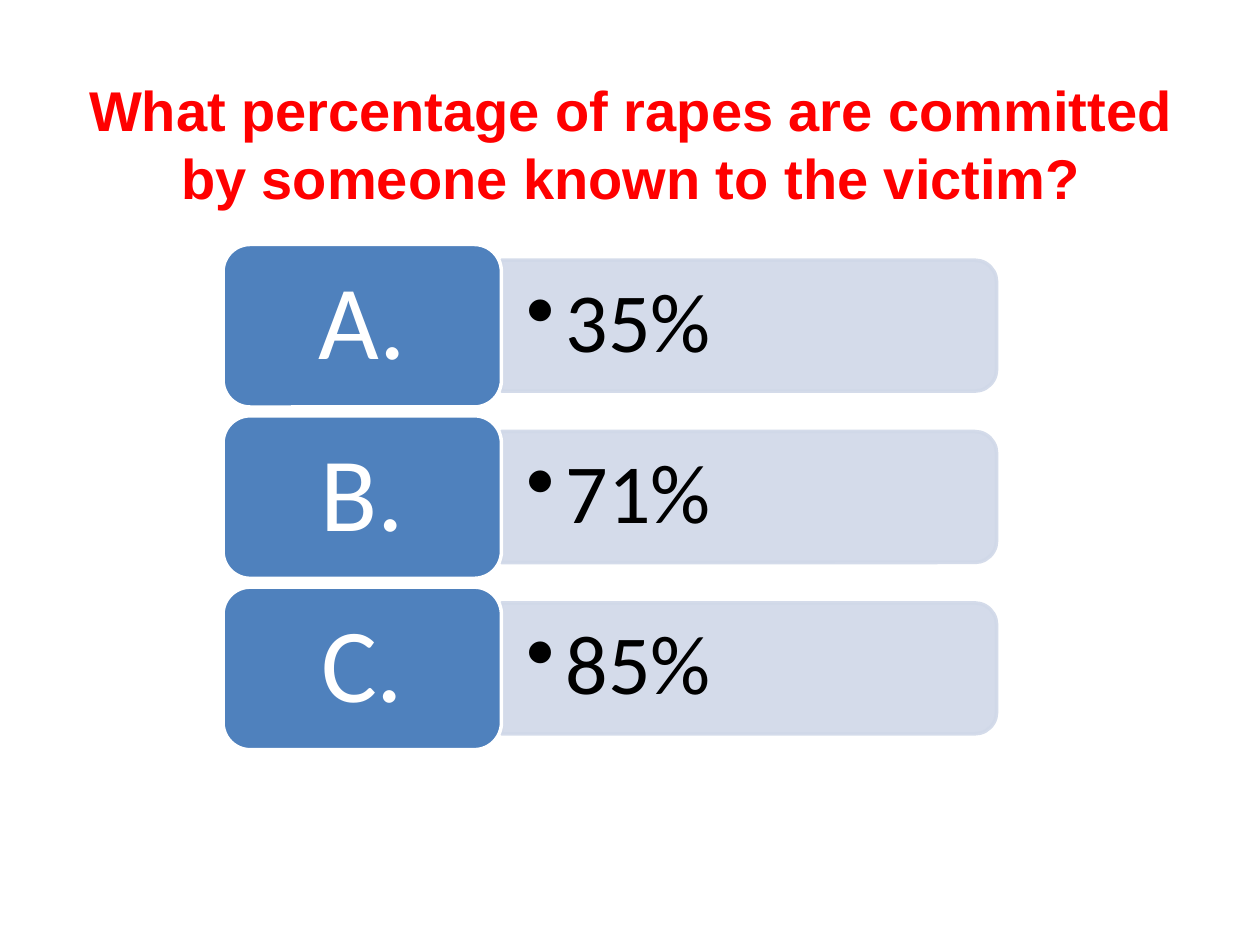
from lxml import etree
from pptx import Presentation
from pptx.dml.color import RGBColor
from pptx.enum.shapes import MSO_SHAPE
from pptx.enum.text import MSO_ANCHOR, PP_ALIGN
from pptx.oxml.ns import qn
from pptx.util import Inches, Pt

ROUNDED = MSO_SHAPE.ROUNDED_RECTANGLE
ROUND_TOP = MSO_SHAPE.ROUND_2_SAME_RECTANGLE
MIDDLE = MSO_ANCHOR.MIDDLE
LEFT, CENTER = PP_ALIGN.LEFT, PP_ALIGN.CENTER

QUESTION = "What percentage of rapes are committed by someone known to the victim?"
ANSWERS = [("A.", "35%"), ("B.", "71%"), ("C.", "85%")]
ROW_PITCH = 1.36
LABEL_WIDTH = 2.21
BAR_HEIGHT = 1.04


def color(hex_value):
    """Turn a hex string into a colour."""
    return RGBColor.from_string(hex_value)


def set_opacity(fill, percent):
    """Make a solid fill partly transparent."""
    choice = fill._xPr.find(qn("a:solidFill"))[0]
    etree.SubElement(choice, qn("a:alpha"), val=str(percent * 1000))


def add_panel(slide, preset, box, fill, line, opacity=100):
    """Add a filled and outlined shape without a shadow."""
    shape = slide.shapes.add_shape(preset, *map(Inches, box))
    shape.shadow.inherit = False
    shape.line.width = Pt(2)
    for paint, hex_value in ((shape.fill, fill), (shape.line.fill, line)):
        paint.solid()
        paint.fore_color.rgb = color(hex_value)
        if opacity < 100:
            set_opacity(paint, opacity)
    return shape


def write(shape, text, size, hex_value, font="Calibri", bold=False,
          alignment=CENTER, spacing=0.9, margins=(0.1, 0.05)):
    """Write one paragraph, centred vertically, and return it."""
    frame = shape.text_frame
    frame.word_wrap = True
    frame.vertical_anchor = MIDDLE
    frame.margin_left = frame.margin_right = Inches(margins[0])
    frame.margin_top = frame.margin_bottom = Inches(margins[1])
    paragraph = frame.paragraphs[0]
    paragraph.alignment = alignment
    paragraph.line_spacing = spacing
    run = paragraph.add_run()
    run.text = text
    run.font.name = font
    run.font.size = Pt(size)
    run.font.bold = bold
    run.font.color.rgb = color(hex_value)
    return paragraph


def add_bullet(paragraph, indent):
    """Give a paragraph a round bullet with a hanging indent."""
    properties = paragraph._p.get_or_add_pPr()
    properties.set("marL", str(Inches(indent)))
    properties.set("indent", str(-Inches(indent)))
    etree.SubElement(properties, qn("a:buChar"), char="•")


def add_title(slide, box):
    """Add the question at the top of the slide."""
    title = slide.shapes.add_textbox(*map(Inches, box))
    title.fill.solid()
    title.fill.fore_color.rgb = color("FFFFFF")
    write(title, QUESTION, 32, "FF0000", font="Arial", bold=True, spacing=1.0)


def add_answer(slide, box, letter, answer):
    """Add one row: an answer bar on the right and its letter on the left."""
    left, top, width, height = box
    bar_left, bar_width = left + LABEL_WIDTH, width - LABEL_WIDTH
    middle = top + height / 2
    bar_box = (bar_left + (bar_width - BAR_HEIGHT) / 2, middle - bar_width / 2,
               BAR_HEIGHT, bar_width)
    bar = add_panel(slide, ROUND_TOP, bar_box, "D0D8E8", "D0D8E8", opacity=90)
    bar.rotation = 90

    text_box = (bar_left, middle - 0.47, bar_width - 0.05, 0.93)
    text = slide.shapes.add_textbox(*map(Inches, text_box))
    paragraph = write(text, answer, 48, "000000", alignment=LEFT, margins=(0.2, 0.1))
    paragraph.level = 1
    add_bullet(paragraph, 0.31)

    label = add_panel(slide, ROUNDED, (left, top, LABEL_WIDTH, height),
                      "4F81BD", "FFFFFF")
    write(label, letter, 60, "FFFFFF", margins=(0.25, 0.12))


def add_answers(slide, box):
    """Stack the answer rows at an equal pitch."""
    left, top, width, row_height = box
    for index, (letter, answer) in enumerate(ANSWERS):
        row_box = (left, top + index * ROW_PITCH, width, row_height)
        add_answer(slide, row_box, letter, answer)


def main():
    """Build and save the slide."""
    presentation = Presentation()
    presentation.slide_width = Inches(10)
    presentation.slide_height = Inches(7.5)
    slide = presentation.slides.add_slide(presentation.slide_layouts[6])
    add_title(slide, (0.51, 0.51, 9, 1.25))
    add_answers(slide, (1.77, 1.94, 6.14, 1.29))
    presentation.save("out.pptx")


if __name__ == "__main__":
    main()
